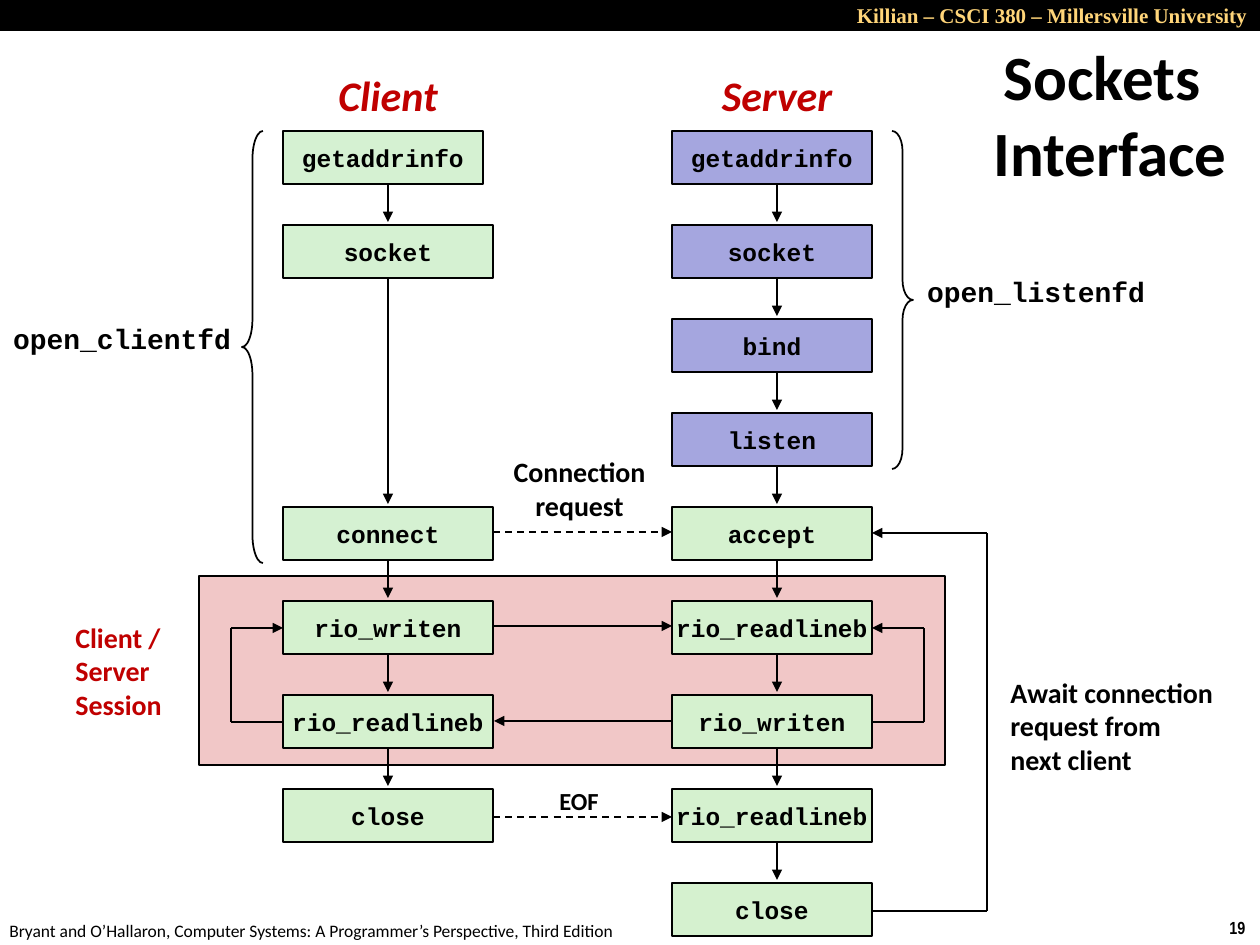
import pptx
import pptx.dml.color
import pptx.enum.dml
import pptx.enum.shapes
import pptx.enum.text
import pptx.oxml
import pptx.oxml.ns
import pptx.util
from lxml import etree

SCALE = 914400 / 126  # EMU per px
ROW_PITCH, STEP_HEIGHT = 94, 53
COLORS = {
    "black": "000000", "white": "FFFFFF", "gold": "FFD579", "red": "C00000",
    "pink": "F1C7C7", "client": "D5F1D2", "shared": "D5F1CF", "server": "A5A6DF",
}
SHAPES = pptx.enum.shapes.MSO_SHAPE
ALIGN = pptx.enum.text.PP_ALIGN
MIDDLE = pptx.enum.text.MSO_ANCHOR.MIDDLE
TOP = pptx.enum.text.MSO_ANCHOR.TOP


def px(*lengths):
    return [pptx.util.Emu(round(length * SCALE)) for length in lengths]


def rgb(name):
    return pptx.dml.color.RGBColor.from_string(COLORS[name])


def write(shape, lines, size, font="Calibri", color="black", align=ALIGN.CENTER,
          bold=True, italic=False, wrap=False, anchor=MIDDLE):
    frame = shape.text_frame
    frame.word_wrap = wrap
    frame.vertical_anchor = anchor
    frame.text = lines
    for paragraph in frame.paragraphs:
        paragraph.alignment = align
        paragraph.font.name = font
        paragraph.font.size = pptx.util.Pt(size)
        paragraph.font.bold = bold
        paragraph.font.italic = italic
        paragraph.font.color.rgb = rgb(color)


def add_text(slide, box, lines, size, **style):
    write(slide.shapes.add_textbox(*px(*box)), lines, size, **style)


def add_block(slide, box, fill=None, kind=SHAPES.RECTANGLE, outlined=True):
    shape = slide.shapes.add_shape(kind, *px(*box))
    shape.shadow.inherit = False
    if fill:
        shape.fill.solid()
        shape.fill.fore_color.rgb = rgb(fill)
    else:
        shape.fill.background()
    if outlined:
        shape.line.color.rgb = rgb("black")
        shape.line.width = pptx.util.Pt(1)
    else:
        shape.line.fill.background()
    return shape


def add_line(slide, start, end, arrow=True, dashed=False):
    line = slide.shapes.add_connector(
        pptx.enum.shapes.MSO_CONNECTOR.STRAIGHT, *px(*start, *end))
    line.line.color.rgb = rgb("black")
    line.line.width = pptx.util.Pt(1)
    if dashed:
        line.line.dash_style = pptx.enum.dml.MSO_LINE.DASH
    if arrow:
        tail = etree.SubElement(line.line._get_or_add_ln(), pptx.oxml.ns.qn("a:tailEnd"))
        tail.set("type", "triangle")
    etree.SubElement(line._element.spPr, pptx.oxml.ns.qn("a:effectLst"))


def add_loop(slide, near, far, bottom, top):
    """Three lines that leave a step sideways and return to a higher one."""
    add_line(slide, (near, bottom), (far, bottom), arrow=False)
    add_line(slide, (far, bottom), (far, top), arrow=False)
    add_line(slide, (far, top), (near, top))


def add_brace(slide, box, kind, curve):
    add_block(slide, box, kind=kind).adjustments[0] = curve


def draw_header(slide, left, top, width, height):
    add_block(slide, (left, top, width, height), "black", outlined=False)
    add_text(slide, (left + 567, top - 4, width - 567, height + 7),
             "Killian – CSCI 380 – Millersville University", 12,
             font="Times New Roman", color="gold", align=ALIGN.RIGHT, wrap=True, anchor=TOP)


def draw_footer(slide, left, top, width, height):
    add_text(slide, (left - 3, top + 3, 640, height),
             "Bryant and O’Hallaron, Computer Systems: A Programmer’s Perspective, Third Edition",
             10, align=ALIGN.LEFT, bold=False, anchor=TOP)
    add_text(slide, (left + width - 43, top, 43, height), "19", 10,
             font="Arial Narrow", align=ALIGN.LEFT, anchor=TOP)


def draw_title(slide, left, top, width, height):
    title = slide.shapes.title
    title.left, title.top, title.width, title.height = px(left, top, width, height)
    write(title, "Sockets Interface", 36, wrap=True)
    title.text_frame.auto_size = pptx.enum.text.MSO_AUTO_SIZE.NONE
    # Hanging indent
    properties = title.text_frame.paragraphs[0]._p.get_or_add_pPr()
    indent = px(16)[0]
    properties.set("marL", str(indent))
    properties.set("indent", str(-indent))


def draw_session(slide, left, top, width, height):
    add_block(slide, (left, top, width, height), "pink")
    right = left + width
    for near, far in ((right - 73, right - 21), (left + 84, left + 32)):
        add_loop(slide, near, far, top + 146, top + 52)
    add_text(slide, (left - 136, top + 38, 116, 113), "Client / Server\nSession", 16,
             color="red", align=ALIGN.LEFT, wrap=True)


def draw_exchanges(slide, left, top, width, height):
    right = left + width
    # Dashed lines begin behind the client steps
    for y in (top, top + height):
        add_line(slide, (left - 74, y), (right, y), dashed=True)
    add_line(slide, (left, top + 94), (right, top + 94))
    add_line(slide, (right, top + 189), (left, top + 189))
    add_text(slide, (left + 6, top - 84, 159, 81), "Connection\nrequest", 16)
    add_text(slide, (left + 52, top + 247, 66, 43), "EOF", 14)


def draw_column(slide, left, top, center, heading, steps):
    """Steps are (row, width, fill, function); arrows join each to the next."""
    add_text(slide, (center - 68, top - 68, 136, 63), heading, 24, color="red", italic=True)
    tops = [top + row * ROW_PITCH for row, *_ in steps]
    for upper, lower in zip(tops, tops[1:]):
        add_line(slide, (center, upper + STEP_HEIGHT - 6), (center, lower - 3))
    for step_top, (_, width, fill, function) in zip(tops, steps):
        block = add_block(slide, (left, step_top, width, STEP_HEIGHT), fill)
        write(block, function, 14, font="Courier New")


def draw_client(slide, left, top):
    draw_column(slide, left, top, left + 105, "Client", [
        (0, 200, "client", "getaddrinfo"), (1, 210, "client", "socket"),
        (4, 210, "client", "connect"), (5, 210, "shared", "rio_writen"),
        (6, 210, "shared", "rio_readlineb"), (7, 210, "shared", "close")])
    add_brace(slide, (left - 41, top, 21, 432), SHAPES.LEFT_BRACE, 1.33)
    add_text(slide, (left - 283, top + 184, 244, 47), "open_clientfd", 16, font="Courier New")


def draw_server(slide, left, top):
    functions = ["getaddrinfo", "socket", "bind", "listen", "accept",
                 "rio_readlineb", "rio_writen", "rio_readlineb", "close"]
    draw_column(slide, left, top, left + 105, "Server", [
        (row, 200, "server" if row < 4 else "shared", function)
        for row, function in enumerate(functions)])
    add_brace(slide, (left + 220, top, 21, 338), SHAPES.RIGHT_BRACE, 0.96)
    add_text(slide, (left + 242, top + 137, 244, 47), "open_listenfd", 16, font="Courier New")
    # Return from close to accept
    add_loop(slide, left + 200, left + 315, top + 780, top + 402)
    add_text(slide, (left + 326, top + 537, 231, 115),
             "Await connection\nrequest from\nnext client", 16, align=ALIGN.LEFT)


def main():
    presentation = pptx.Presentation()
    presentation.slide_width, presentation.slide_height = px(1260, 945)
    slide = presentation.slides.add_slide(presentation.slide_layouts[5])
    slide.background.fill.solid()
    slide.background.fill.fore_color.rgb = rgb("white")
    draw_footer(slide, 0, 911, 1260, 34)
    draw_header(slide, 0, 0, 1260, 31)
    draw_title(slide, 955, 31, 294, 165)
    draw_session(slide, 199, 576, 746, 189)
    draw_exchanges(slide, 494, 532, 178, 285)
    draw_client(slide, 283, 131)
    draw_server(slide, 672, 131)
    presentation.save("out.pptx")


if __name__ == "__main__":
    main()
